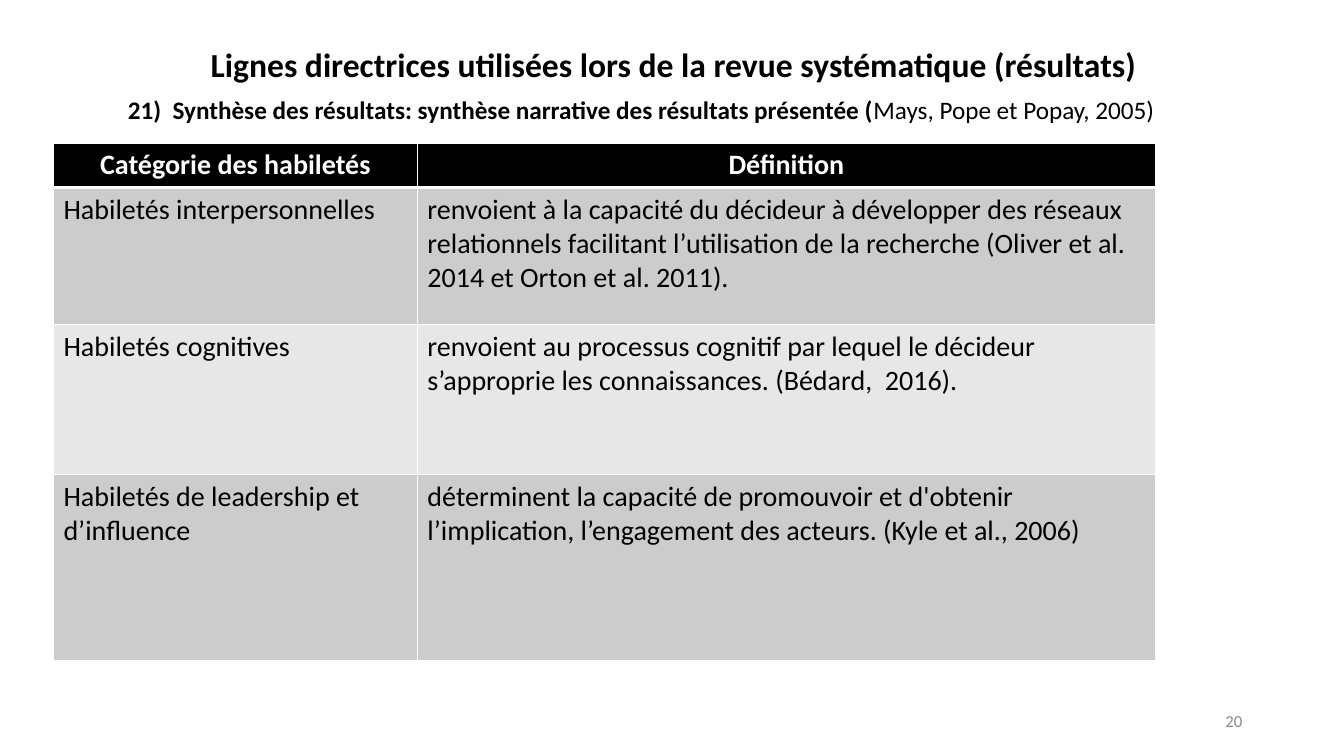
from lxml import etree
from pptx import Presentation
from pptx.dml.color import RGBColor
from pptx.enum.text import MSO_ANCHOR, PP_ALIGN
from pptx.oxml.ns import qn
from pptx.util import Inches, Pt

LEFT, CENTER, RIGHT = PP_ALIGN.LEFT, PP_ALIGN.CENTER, PP_ALIGN.RIGHT
TOP, MIDDLE = MSO_ANCHOR.TOP, MSO_ANCHOR.MIDDLE

FONT = "Calibri"
COLORS = {
    "text": "000000",
    "header": "000000",
    "header_text": "FFFFFF",
    "border": "FFFFFF",
    "odd_row": "CCCCCC",
    "even_row": "E7E7E7",
    "number": "8C8C8C",
}

TITLE = "Lignes directrices utilisées lors de la revue systématique (résultats)"
SYNTHESIS = "21)  Synthèse des résultats: synthèse narrative des résultats présentée ("
REFERENCE = "Mays, Pope et Popay, 2005)"
SLIDE_NUMBER = "20"
SKILLS = [
    ("Catégorie des habiletés", "Définition"),
    ("Habiletés interpersonnelles",
     "renvoient à la capacité du décideur à développer des réseaux relationnels "
     "facilitant l’utilisation de la recherche (Oliver et al. 2014 et Orton et al. 2011)."),
    ("Habiletés cognitives",
     "renvoient au processus cognitif par lequel le décideur s’approprie les "
     "connaissances. (Bédard,  2016)."),
    ("Habiletés de leadership et d’influence",
     "déterminent la capacité de promouvoir et d'obtenir l’implication, "
     "l’engagement des acteurs. (Kyle et al., 2006)"),
]
COLUMN_WIDTHS = (3.61, 7.32)
ROW_HEIGHTS = (0.44, 1.36, 1.49, 1.84)


def format_run(run, size, color, bold=False):
    run.font.name = FONT
    run.font.size = Pt(size)
    run.font.bold = bold
    run.font.color.rgb = RGBColor.from_string(COLORS[color])


def add_text(slide, box, pieces, size, color="text", align=LEFT, anchor=TOP, wrap=True):
    frame = slide.shapes.add_textbox(*map(Inches, box)).text_frame
    frame.word_wrap = wrap
    frame.vertical_anchor = anchor
    paragraph = frame.paragraphs[0]
    paragraph.alignment = align
    for text, bold in pieces:
        run = paragraph.add_run()
        run.text = text
        format_run(run, size, color, bold)
    return paragraph


def set_borders(cell, widths):
    properties = cell._tc.get_or_add_tcPr()
    for position, (side, width) in enumerate(widths.items()):
        line = etree.Element(qn(f"a:ln{side}"), w=str(Pt(width)))
        fill = etree.SubElement(line, qn("a:solidFill"))
        etree.SubElement(fill, qn("a:srgbClr"), val=COLORS["border"])
        properties.insert(position, line)


def add_skills_table(slide):
    size = Inches(sum(COLUMN_WIDTHS)), Inches(sum(ROW_HEIGHTS))
    table = slide.shapes.add_table(
        len(SKILLS), len(COLUMN_WIDTHS), Inches(0.53), Inches(1.42), *size).table
    for column, width in zip(table.columns, COLUMN_WIDTHS):
        column.width = Inches(width)
    for row, height in zip(table.rows, ROW_HEIGHTS):
        row.height = Inches(height)
    for r, skill in enumerate(SKILLS):
        header = r == 0
        fill = "header" if header else "odd_row" if r % 2 else "even_row"
        for c, text in enumerate(skill):
            cell = table.cell(r, c)
            cell.fill.solid()
            cell.fill.fore_color.rgb = RGBColor.from_string(COLORS[fill])
            set_borders(cell, {"L": 1, "R": 1, "T": 3 if r == 1 else 1, "B": 3 if header else 1})
            paragraph = cell.text_frame.paragraphs[0]
            paragraph.text = text
            paragraph.alignment = CENTER if header else LEFT
            format_run(paragraph.runs[0], 20, "header_text" if header else "text", header)


def main():
    presentation = Presentation()
    presentation.slide_width = Inches(13.33)
    presentation.slide_height = Inches(7.5)
    slide = presentation.slides.add_slide(presentation.slide_layouts[6])
    add_skills_table(slide)
    add_text(slide, (9.42, 6.95, 3, 0.4), [(SLIDE_NUMBER, False)], 12, "number", RIGHT, MIDDLE)
    add_text(slide, (1.17, 0.89, 10.76, 0.4), [(SYNTHESIS, True), (REFERENCE, False)], 18,
             wrap=False)
    title = add_text(slide, (1.17, 0.43, 11.02, 0.47), [(TITLE, True)], 24,
                     align=CENTER, anchor=MIDDLE)
    title.line_spacing = 0.9
    presentation.save("out.pptx")


if __name__ == "__main__":
    main()
